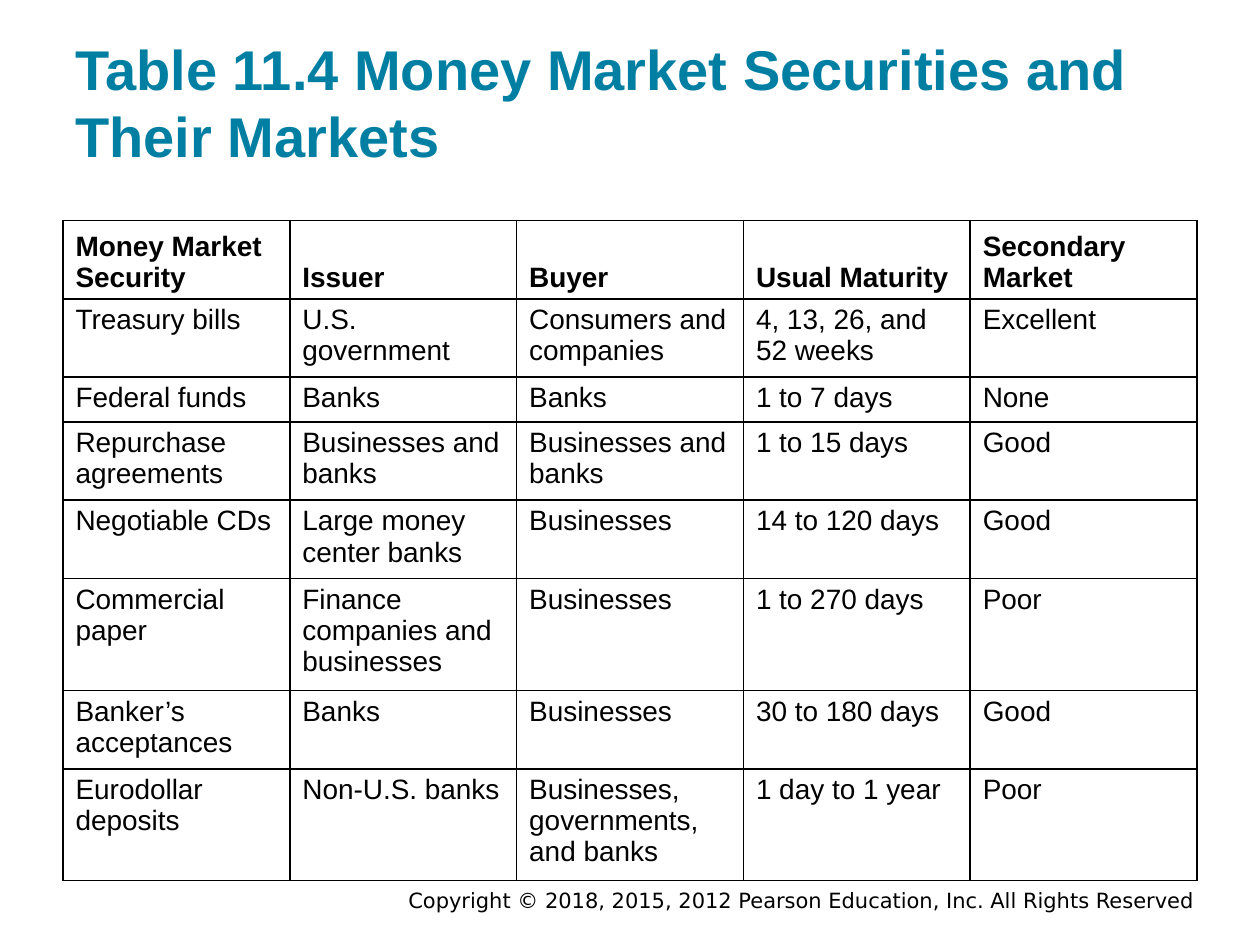
from lxml import etree
from pptx import Presentation
from pptx.dml.color import RGBColor
from pptx.enum import text
from pptx.oxml import ns
from pptx.util import Pt

# Content
TITLE = "Table 11.4 Money Market Securities and Their Markets"
COPYRIGHT = "Copyright © 2018, 2015, 2012 Pearson Education, Inc. All Rights Reserved"
HEADER = ("Money Market Security", "Issuer", "Buyer", "Usual Maturity", "Secondary Market")
SECURITIES = [
    ("Treasury bills", "U.S. government", "Consumers and companies",
     "4, 13, 26, and 52 weeks", "Excellent"),
    ("Federal funds", "Banks", "Banks", "1 to 7 days", "None"),
    ("Repurchase agreements", "Businesses and banks", "Businesses and banks",
     "1 to 15 days", "Good"),
    ("Negotiable CDs", "Large money center banks", "Businesses", "14 to 120 days", "Good"),
    ("Commercial paper", "Finance companies and businesses", "Businesses",
     "1 to 270 days", "Poor"),
    ("Banker’s acceptances", "Banks", "Businesses", "30 to 180 days", "Good"),
    ("Eurodollar deposits", "Non-U.S. banks", "Businesses, governments, and banks",
     "1 day to 1 year", "Poor"),
]
ROW_LINES = (2, 2, 1, 2, 2, 3, 2, 3)
LINE_HEIGHTS = {1: 24.5, 2: 43.4, 3: 62.6}
COLORS = {"title": "007FA3", "ink": "000000", "paper": "FFFFFF"}

# Layout, in points
LEFT, WIDTH = 36, 648
TABLE_TOP = 126
INSET = 7.2
CELL_INSET = 3.2


def write(frame, words, size=16, bold=False, color="ink", font="Arial",
          align=text.PP_ALIGN.LEFT):
    para = frame.paragraphs[0]
    para.alignment = align
    span = para.add_run()
    span.text = words
    span.font.size = Pt(size)
    span.font.bold = bold
    span.font.name = font
    span.font.color.rgb = RGBColor.from_string(COLORS[color])


def add_text(page, words, left, top, width, height, anchor, inset, **style):
    box = page.shapes.add_textbox(Pt(left), Pt(top), Pt(width), Pt(height))
    frame = box.text_frame
    frame.word_wrap = True
    frame.vertical_anchor = anchor
    frame.margin_left = frame.margin_right = Pt(INSET)
    frame.margin_top = frame.margin_bottom = Pt(inset)
    write(frame, words, **style)


def add_borders(cell):
    properties = cell._tc.get_or_add_tcPr()
    for side in ("lnL", "lnR", "lnT", "lnB"):
        line = etree.SubElement(properties, ns.qn("a:" + side), w=str(Pt(1)))
        fill = etree.SubElement(line, ns.qn("a:solidFill"))
        etree.SubElement(fill, ns.qn("a:srgbClr"), val=COLORS["ink"])


def add_securities(page):
    rows = [HEADER] + SECURITIES
    heights = [LINE_HEIGHTS[lines] for lines in ROW_LINES]
    table = page.shapes.add_table(len(rows), len(HEADER), Pt(LEFT), Pt(TABLE_TOP),
                                  Pt(WIDTH), Pt(sum(heights))).table
    table.horz_banding = False
    for column in table.columns:
        column.width = Pt(WIDTH / len(HEADER))
    for r, (row, height) in enumerate(zip(rows, heights)):
        table.rows[r].height = Pt(height)
        for c, words in enumerate(row):
            cell = table.cell(r, c)
            cell.margin_left = cell.margin_right = Pt(INSET)
            cell.margin_top = cell.margin_bottom = Pt(CELL_INSET)
            cell.vertical_anchor = text.MSO_ANCHOR.TOP if r else text.MSO_ANCHOR.BOTTOM
            add_borders(cell)
            cell.fill.solid()
            cell.fill.fore_color.rgb = RGBColor.from_string(COLORS["paper"])
            write(cell.text_frame, words, bold=r == 0)


def main():
    deck = Presentation()
    deck.slide_width, deck.slide_height = Pt(720), Pt(540)
    page = deck.slides.add_slide(deck.slide_layouts[6])

    # Copyright line, title and table
    add_text(page, COPYRIGHT, 126, 506.2, 563.8, 15.8, text.MSO_ANCHOR.MIDDLE, 3.6,
             size=12, font="DejaVu Sans", align=text.PP_ALIGN.RIGHT)
    add_text(page, TITLE, LEFT, 17.3, WIDTH, 86.4, text.MSO_ANCHOR.BOTTOM, INSET,
             size=32, bold=True, color="title")
    add_securities(page)
    deck.save("out.pptx")


if __name__ == "__main__":
    main()
